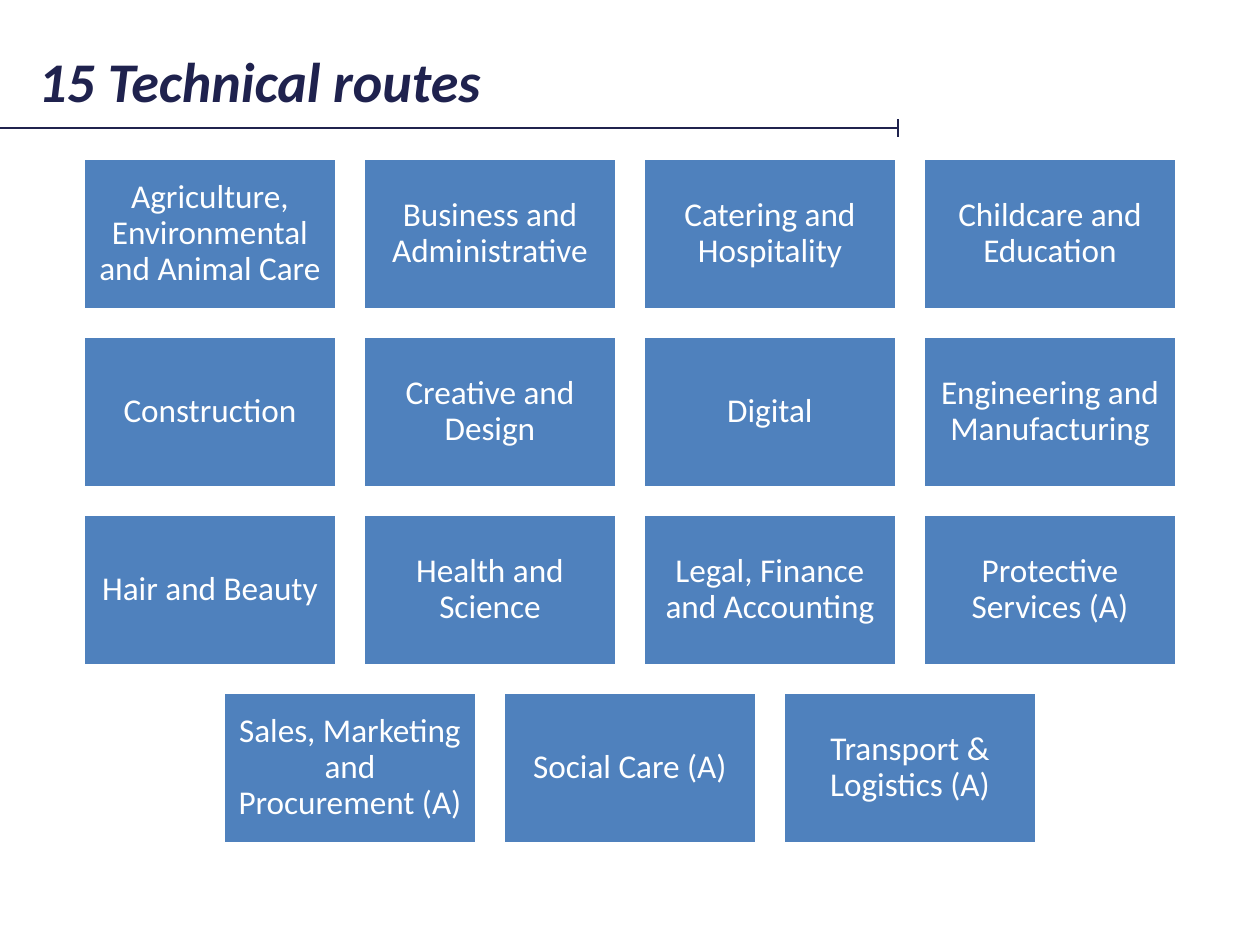
from pptx import Presentation
from pptx.dml.color import RGBColor
from pptx.enum.shapes import MSO_CONNECTOR, MSO_SHAPE
from pptx.enum.text import MSO_ANCHOR, PP_ALIGN
from pptx.oxml.ns import qn
from pptx.util import Pt
from lxml.etree import SubElement

PX = 914400 / 126
WIDE, HIGH = 1260, 945
NAVY, BLUE, WHITE = "20234E", "4F81BD", "FFFFFF"


def px(*sizes):
    """Turn pixel lengths into EMU."""
    return [round(size * PX) for size in sizes]


def paint(color, value):
    color.rgb = RGBColor.from_string(value)


deck = Presentation()
deck.slide_width, deck.slide_height = px(WIDE, HIGH)
slide = deck.slides.add_slide(deck.slide_layouts[6])
shapes = slide.shapes

# Rule under the title, closed by a short tick
for ends in [(0, 128, 898, 128), (898, 137, 898, 119)]:
    rule = shapes.add_connector(MSO_CONNECTOR.STRAIGHT, *px(*ends))
    paint(rule.line.color, NAVY)
    rule.line.width = Pt(1.25)
    SubElement(rule._element.spPr, qn("a:effectLst"))

# Title
title = shapes.add_textbox(*px(26, 38, 1205, 94))
frame = title.text_frame
frame.word_wrap = True
frame.margin_top = px(9)[0]
frame.text = "15 Technical routes"
font = frame.paragraphs[0].font
look = {"name": "Calibri", "size": Pt(32), "bold": True, "italic": True}
for key, value in look.items():
    setattr(font, key, value)
paint(font.color, "1F224E")

# Routes: each row is centred on the slide
rows = [
    ["Agriculture, Environmental and Animal Care", "Business and Administrative",
     "Catering and Hospitality", "Childcare and Education"],
    ["Construction", "Creative and Design", "Digital",
     "Engineering and Manufacturing"],
    ["Hair and Beauty", "Health and Science", "Legal, Finance and Accounting",
     "Protective Services (A)"],
    ["Sales, Marketing and Procurement (A)", "Social Care (A)",
     "Transport & Logistics (A)"],
]
TOP, BOX_W, BOX_H, GAP = 158, 254, 152, 26
inset = px(10)[0]
layout = {
    "word_wrap": True, "vertical_anchor": MSO_ANCHOR.MIDDLE,
    "margin_left": inset, "margin_right": inset,
    "margin_top": inset, "margin_bottom": inset,
}

for row, routes in enumerate(rows):
    left = (WIDE - len(routes) * (BOX_W + GAP) + GAP) // 2
    top = TOP + row * (BOX_H + GAP)
    for col, route in enumerate(routes):
        spot = px(left + col * (BOX_W + GAP), top, BOX_W, BOX_H)
        box = shapes.add_shape(MSO_SHAPE.RECTANGLE, *spot)
        box.shadow.inherit = False
        box.fill.solid()
        paint(box.fill.fore_color, BLUE)
        paint(box.line.color, WHITE)
        box.line.width = Pt(2)
        frame = box.text_frame
        for key, value in layout.items():
            setattr(frame, key, value)
        frame.text = route
        para = frame.paragraphs[0]
        para.alignment = PP_ALIGN.CENTER
        para.line_spacing = 0.9
        para.font.name, para.font.size = "Calibri", Pt(19)
        paint(para.font.color, WHITE)

deck.save("out.pptx")
